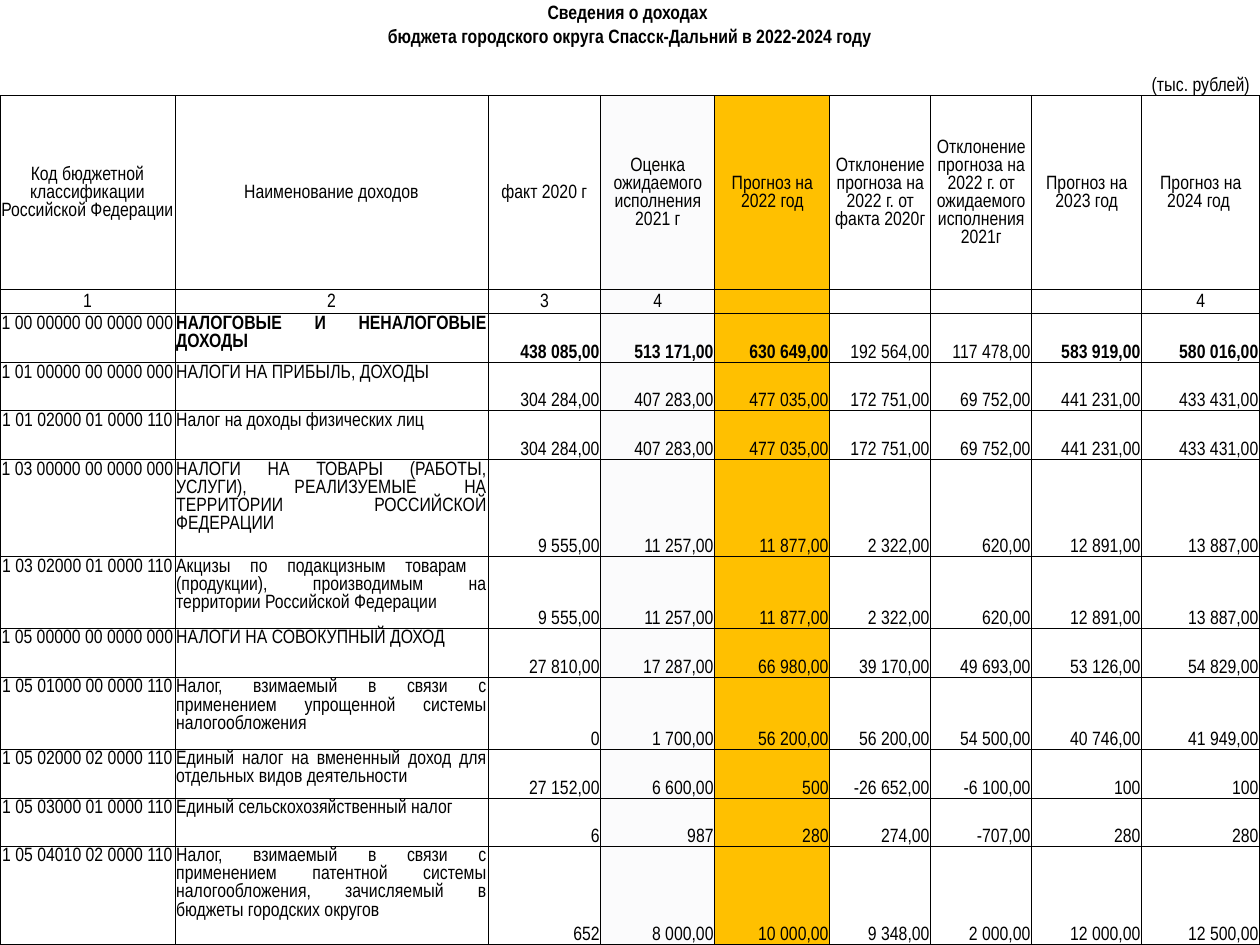
from dataclasses import dataclass
from lxml import etree
from pptx import Presentation
from pptx import util as u
from pptx.dml import color as c
from pptx.enum import text as t
from pptx.oxml import ns

PX = u.Inches(1) // 126


@dataclass(frozen=True)
class Theme:
    font: str = "Arial Narrow"
    size: u.Pt = u.Pt(11)
    ink: str = "000000"
    estimate: str = "FBFBFC"
    forecast: str = "FFC000"
    line: u.Pt = u.Pt(0.5)
    no_style: str = "{2D5ABB26-0587-4C30-8999-92F81FD0307C}"


@dataclass(frozen=True)
class Row:
    height: int
    texts: tuple[str, ...]
    kind: str = "data"
    bold: tuple[int, ...] = ()


THEME = Theme()
ALIGN, ANCHOR = t.PP_ALIGN, t.MSO_ANCHOR
COLUMNS = (175, 313, 113, 114, 115, 101, 101, 110, 118)
FILLS = {3: THEME.estimate, 4: THEME.forecast}
EDGES = {"title": (), "unit": ("lnB",), "head": ("lnL", "lnR", "lnT", "lnB"),
         "data": ("lnL", "lnR", "lnT", "lnB")}


def data(height: int, code: str, name: str, values: str, bold: tuple[int, ...] = ()) -> Row:
    return Row(height, (code, name, *values.split("|")), bold=bold)


ROWS = (
    Row(24, ("Сведения о доходах ",), "title", (0,)),
    Row(24, ("бюджета городского округа Спасск-Дальний в 2022-2024 году",), "title", (0,)),
    Row(48, ("",) * 8 + ("(тыс. рублей)",), "unit"),
    Row(194, ("Код бюджетной классификации Российской Федерации", "Наименование доходов",
              "факт 2020 г", "Оценка ожидаемого исполнения 2021 г", "Прогноз на 2022 год",
              "Отклонение прогноза на 2022 г. от факта 2020г",
              "Отклонение прогноза на 2022 г. от ожидаемого исполнения 2021г",
              "Прогноз на 2023 год", "Прогноз на 2024 год "), "head"),
    Row(24, ("1", "2", "3", "4", "", "", "", "", "4"), "head"),
    data(49, "1 00 00000 00 0000 000 ", "НАЛОГОВЫЕ И НЕНАЛОГОВЫЕ ДОХОДЫ",
         "438 085,00|513 171,00|630 649,00|192 564,00|117 478,00|583 919,00|580 016,00",
         (1, 2, 3, 4, 7, 8)),
    data(48, "1 01 00000 00 0000 000", "НАЛОГИ НА ПРИБЫЛЬ, ДОХОДЫ",
         "304 284,00|407 283,00|477 035,00|172 751,00|69 752,00|441 231,00|433 431,00"),
    data(49, "1 01 02000 01 0000 110", "Налог на доходы физических лиц",
         "304 284,00|407 283,00|477 035,00|172 751,00|69 752,00|441 231,00|433 431,00"),
    data(97, "1 03 00000 00 0000 000",
         "НАЛОГИ НА ТОВАРЫ (РАБОТЫ, УСЛУГИ), РЕАЛИЗУЕМЫЕ НА ТЕРРИТОРИИ РОССИЙСКОЙ ФЕДЕРАЦИИ",
         "9 555,00|11 257,00|11 877,00|2 322,00|620,00|12 891,00|13 887,00"),
    data(72, "1 03 02000 01 0000 110",
         "Акцизы по подакцизным товарам  (продукции), производимым на территории "
         "Российской Федерации",
         "9 555,00|11 257,00|11 877,00|2 322,00|620,00|12 891,00|13 887,00"),
    data(49, "1 05 00000 00 0000 000", "НАЛОГИ НА СОВОКУПНЫЙ ДОХОД",
         "27 810,00|17 287,00|66 980,00|39 170,00|49 693,00|53 126,00|54 829,00"),
    data(72, "1 05 01000 00 0000 110",
         "Налог, взимаемый в связи с применением упрощенной системы налогообложения",
         "0|1 700,00|56 200,00|56 200,00|54 500,00|40 746,00|41 949,00"),
    data(49, "1 05 02000 02 0000 110",
         "Единый налог на вмененный доход для отдельных видов деятельности",
         "27 152,00|6 600,00|500|-26 652,00|-6 100,00|100|100"),
    data(48, "1 05 03000 01 0000 110", "Единый сельскохозяйственный налог",
         "6|987|280|274,00|-707,00|280|280"),
    data(98, "1 05 04010 02 0000 110",
         "Налог, взимаемый в связи с применением патентной системы налогообложения, "
         "зачисляемый в бюджеты городских округов",
         "652|8 000,00|10 000,00|9 348,00|2 000,00|12 000,00|12 500,00"),
)


def set_all(obj: object, values: dict) -> None:
    for name, value in values.items():
        setattr(obj, name, value)


def placement(kind: str, col: int) -> tuple:
    if kind != "data":
        return ALIGN.CENTER, ANCHOR.MIDDLE if kind == "head" else ANCHOR.BOTTOM
    if col < 2:
        return (ALIGN.CENTER, ALIGN.JUSTIFY)[col], ANCHOR.TOP
    return ALIGN.RIGHT, ANCHOR.BOTTOM


def draw_borders(cell, edges: tuple[str, ...]) -> None:
    tc_pr = cell._tc.get_or_add_tcPr()
    for i, edge in enumerate(edges):
        ln = etree.Element(ns.qn(f"a:{edge}"), w=str(THEME.line))
        fill = etree.SubElement(ln, ns.qn("a:solidFill"))
        etree.SubElement(fill, ns.qn("a:srgbClr"), val=THEME.ink)
        tc_pr.insert(i, ln)


def draw_cell(cell, row: Row, col: int) -> None:
    align, anchor = placement(row.kind, col)
    side = u.Inches(0.01)
    set_all(cell, dict(margin_left=side, margin_right=side, margin_top=side,
                       margin_bottom=0, vertical_anchor=anchor))
    p = cell.text_frame.paragraphs[0]
    p.alignment = align
    content = row.texts[col] if col < len(row.texts) else ""
    if content:
        r = p.add_run()
        r.text = content
        set_all(r.font, dict(name=THEME.font, size=THEME.size, bold=col in row.bold))
        r.font.color.rgb = c.RGBColor.from_string(THEME.ink)
    else:
        end = etree.SubElement(p._p, ns.qn("a:endParaRPr"), sz=str(int(THEME.size.pt * 100)))
        etree.SubElement(end, ns.qn("a:latin"), typeface=THEME.font)
    if row.kind in ("head", "data") and col in FILLS:
        cell.fill.solid()
        cell.fill.fore_color.rgb = c.RGBColor.from_string(FILLS[col])
    else:
        cell.fill.background()
    draw_borders(cell, EDGES[row.kind])


def draw_table(s, rows: tuple[Row, ...]) -> None:
    height = sum(row.height for row in rows)
    frame = s.shapes.add_table(len(rows), len(COLUMNS), 0, 0, sum(COLUMNS) * PX, height * PX)
    table = frame.table
    set_all(table, dict(first_row=False, horz_banding=False))
    table._tbl.tblPr.find(ns.qn("a:tableStyleId")).text = THEME.no_style
    for column, width in zip(table.columns, COLUMNS):
        column.width = width * PX
    for i, row in enumerate(rows):
        table.rows[i].height = row.height * PX
        for col in range(len(COLUMNS)):
            draw_cell(table.cell(i, col), row, col)
        if row.kind == "title":
            table.cell(i, 0).merge(table.cell(i, len(COLUMNS) - 1))


def main() -> None:
    prs = Presentation()
    set_all(prs, dict(slide_width=1260 * PX, slide_height=945 * PX))
    s = prs.slides.add_slide(prs.slide_layouts[6])
    draw_table(s, ROWS)
    prs.save("out.pptx")


if __name__ == "__main__":
    main()
